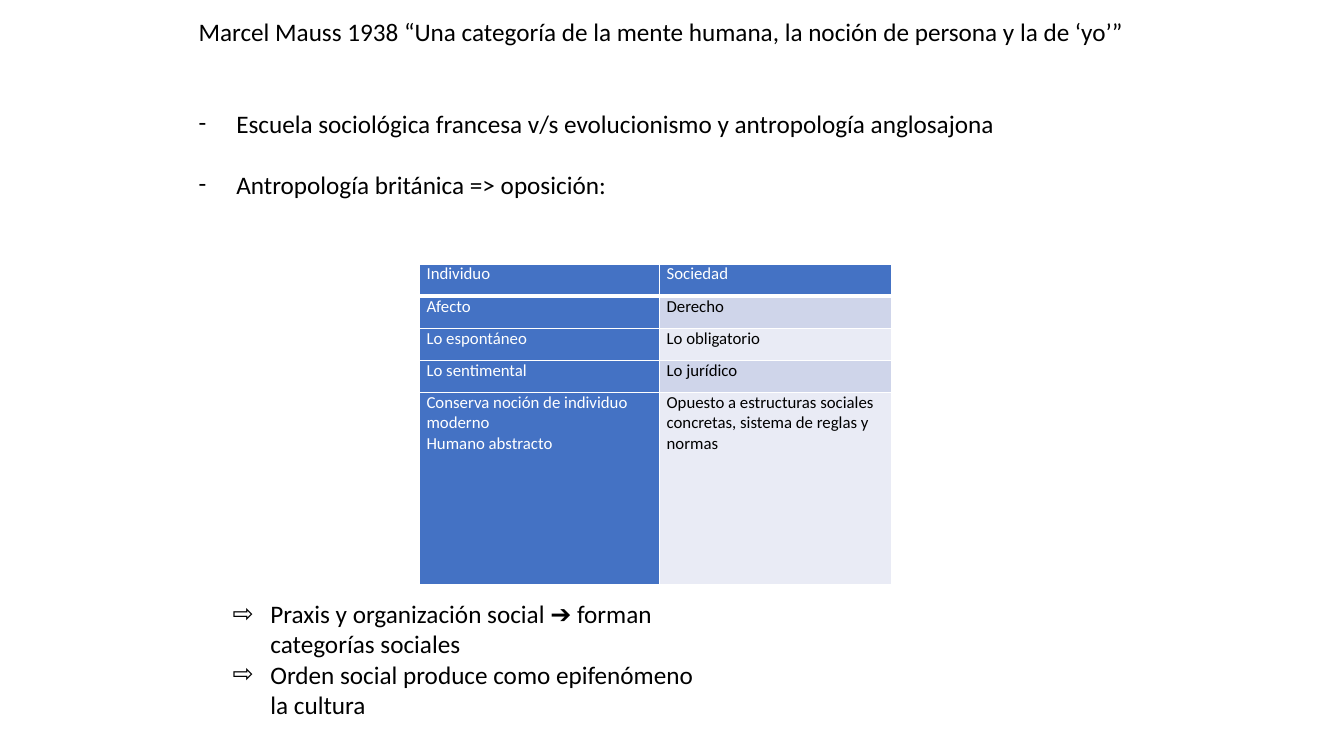
from dataclasses import dataclass

from lxml import etree
from pptx import Presentation
from pptx import util as u
from pptx.dml.color import RGBColor
from pptx.enum import text
from pptx.oxml import ns


@dataclass(frozen=True)
class Theme:
    font: str = "Calibri"
    size: int = 18
    table_size: int = 12
    ink: str = "000000"
    white: str = "FFFFFF"
    accent: str = "4472C4"
    bands: tuple = ("CFD5EA", "E9EBF5")
    border: float = 1
    header_border: float = 3
    indent: float = 0.95
    cell_margin: float = 0.18


def apply(obj, fmt):
    for name, value in fmt.items():
        setattr(obj, name, value)


class Deck:
    """Draw styled elements on the current slide."""

    def __init__(self, prs, theme, layout):
        self.theme = theme
        self.s = prs.slides.add_slide(prs.slide_layouts[layout])

    def add_words(self, p, words, size, color):
        r = p.add_run()
        r.text = words
        apply(r.font, {"name": self.theme.font, "size": u.Pt(size), "bold": False})
        r.font.color.rgb = RGBColor.from_string(color)
        apply(p, {"alignment": text.PP_ALIGN.LEFT, "line_spacing": 1.0,
                  "space_before": u.Pt(0), "space_after": u.Pt(0)})

    def bullet(self, p, char):
        pPr = p._p.get_or_add_pPr()
        indent = u.Cm(self.theme.indent)
        pPr.set("marL", str(indent))
        pPr.set("indent", str(-indent))
        etree.SubElement(pPr, ns.qn("a:buFont"), typeface=self.theme.font)
        etree.SubElement(pPr, ns.qn("a:buChar"), char=char)

    def placeholder(self, idx, box, lines, char=None, gap=0):
        sp = self.s.placeholders[idx]
        apply(sp, dict(zip(("left", "top", "width", "height"), map(u.Cm, box))))
        tf = sp.text_frame
        apply(tf, {"word_wrap": True, "auto_size": text.MSO_AUTO_SIZE.NONE,
                   "vertical_anchor": text.MSO_ANCHOR.TOP})
        for i, line in enumerate(lines):
            p = tf.add_paragraph() if i else tf.paragraphs[0]
            if char:
                self.bullet(p, char)
            self.add_words(p, line, self.theme.size, self.theme.ink)
            if i:
                p.space_before = u.Pt(gap)

    def borders(self, cell, header):
        t = self.theme
        tcPr = cell._tc.get_or_add_tcPr()
        for i, side in enumerate("LRTB"):
            width = t.header_border if header and side == "B" else t.border
            ln = etree.Element(ns.qn(f"a:ln{side}"), w=str(u.Pt(width)))
            fill = etree.SubElement(ln, ns.qn("a:solidFill"))
            etree.SubElement(fill, ns.qn("a:srgbClr"), val=t.white)
            tcPr.insert(i, ln)

    def table(self, left, top, widths, heights, rows):
        t = self.theme
        box = map(u.Cm, (left, top, sum(widths), sum(heights)))
        tbl = self.s.shapes.add_table(len(rows), len(widths), *box).table
        apply(tbl, {"first_row": False, "horz_banding": False})
        for col, width in zip(tbl.columns, widths):
            col.width = u.Cm(width)
        for i, (row, height) in enumerate(zip(rows, heights)):
            tbl.rows[i].height = u.Cm(height)
            for j, words in enumerate(row):
                cell = tbl.cell(i, j)
                strong = i == 0 or j == 0
                side = u.Cm(t.cell_margin)
                apply(cell, {"margin_left": side, "margin_right": side,
                             "margin_top": 0, "margin_bottom": 0,
                             "vertical_anchor": text.MSO_ANCHOR.TOP})
                cell.fill.solid()
                fill = t.accent if strong else t.bands[(i - 1) % 2]
                cell.fill.fore_color.rgb = RGBColor.from_string(fill)
                self.borders(cell, i == 0)
                tf = cell.text_frame
                for k, line in enumerate(words.split("\n")):
                    p = tf.add_paragraph() if k else tf.paragraphs[0]
                    self.add_words(p, line, t.table_size, t.white if strong else t.ink)


def main():
    prs = Presentation()
    apply(prs, {"slide_width": u.Cm(33.87), "slide_height": u.Cm(19.05)})
    deck = Deck(prs, Theme(), layout=3)
    deck.placeholder(0, (4.75, 0.28, 24.2, 1.05), [
        "Marcel Mauss 1938 “Una categoría de la mente humana, la noción de persona y la de ‘yo’”",
    ])
    deck.placeholder(1, (4.75, 2.6, 24.2, 2.55), [
        "Escuela sociológica francesa v/s evolucionismo y antropología anglosajona",
        "Antropología británica => oposición:",
    ], char="-", gap=22)
    deck.table(10.57, 6.65, (6.05, 5.84), [0.81] * 4 + [4.85], [
        ("Individuo", "Sociedad"),
        ("Afecto", "Derecho"),
        ("Lo espontáneo", "Lo obligatorio"),
        ("Lo sentimental", "Lo jurídico"),
        ("Conserva noción de individuo moderno\nHumano abstracto",
         "Opuesto a estructuras sociales concretas, sistema de reglas y normas"),
    ])
    deck.placeholder(2, (5.61, 14.95, 12.7, 3.34), [
        "Praxis y organización social ➔ forman categorías sociales",
        "Orden social produce como epifenómeno la cultura",
    ], char="⇨")
    prs.save("out.pptx")


if __name__ == "__main__":
    main()
